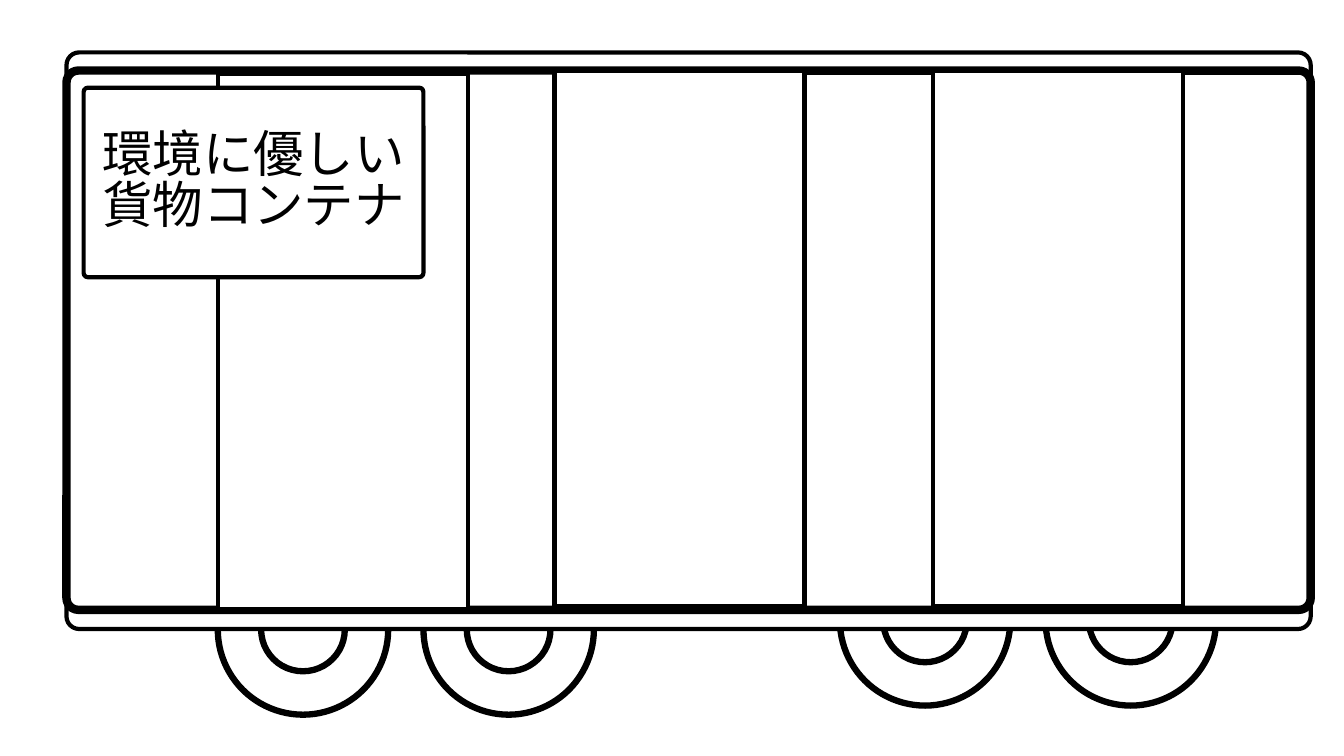
import dataclasses

import pptx
import pptx.dml.color
import pptx.enum.shapes
import pptx.enum.text
import pptx.util
from pptx.oxml.xmlchemy import OxmlElement


@dataclasses.dataclass(frozen=True)
class Theme:
    ink: str = "000000"
    paper: str = "FFFFFF"
    font: str = "Noto Sans CJK JP"
    size: int = 36
    pitch: float = 0.85
    thin: float = 3
    wheel: float = 4.5
    thick: float = 6
    corner: float = 0.022


class Wagon:
    scale = 9144
    kinds = pptx.enum.shapes.MSO_SHAPE

    def __init__(self, deck, theme):
        self.theme = theme
        self.slide = deck.slides.add_slide(deck.slide_layouts[6])

    def color(self, value):
        return pptx.dml.color.RGBColor.from_string(value)

    def shape(self, kind, box, width, fill=None, owner=None):
        owner = owner or self.slide
        item = owner.shapes.add_shape(kind, *(n * self.scale for n in box))
        item.shadow.inherit = False
        if fill:
            item.fill.solid()
            item.fill.fore_color.rgb = self.color(fill)
        else:
            item.fill.background()
        item.line.color.rgb = self.color(self.theme.ink)
        item.line.width = pptx.util.Pt(width)
        return item

    def wheel(self, left, top, size=169, inset=43):
        group = self.slide.shapes.add_group_shape()
        for gap in (0, inset):
            side = size - 2 * gap
            box = (left + gap, top + gap, side, side)
            self.shape(self.kinds.OVAL, box, self.theme.wheel, owner=group)

    def panel(self, left, top):
        box = (left, top, 248, 531)
        self.shape(self.kinds.RECTANGLE, box, self.theme.thin, self.theme.paper)

    def plate(self, box, width):
        item = self.shape(
            self.kinds.ROUNDED_RECTANGLE, box, width, self.theme.paper
        )
        item.adjustments[0] = self.theme.corner
        return item

    def label(self, box, lines):
        frame = self.plate(box, self.theme.thin).text_frame
        frame.word_wrap = True
        frame.vertical_anchor = pptx.enum.text.MSO_ANCHOR.MIDDLE
        for index, text in enumerate(lines):
            para = frame.add_paragraph() if index else frame.paragraphs[0]
            para.alignment = pptx.enum.text.PP_ALIGN.CENTER
            para.line_spacing = self.theme.pitch
            run = para.add_run()
            run.text = text
            run.font.size = pptx.util.Pt(self.theme.size)
            run.font.color.rgb = self.color(self.theme.ink)
            run.font.name = self.theme.font
            east = OxmlElement("a:ea")
            east.set("typeface", self.theme.font)
            run.font._element.append(east)


def main():
    deck = pptx.Presentation()
    deck.slide_width = 1333 * Wagon.scale
    deck.slide_height = 750 * Wagon.scale
    theme = Theme()
    wagon = Wagon(deck, theme)
    for start, top in ((216, 540), (833, 531)):
        for step in range(2):
            wagon.wheel(start + 204 * step, top)
    wagon.plate((66, 52, 1234, 572), theme.thin)
    wagon.plate((66, 70, 1234, 535), theme.thick)
    wagon.panel(216, 73)
    wagon.label((83, 87, 337, 188), ("環境に優しい", "貨物コンテナ"))
    for left in (925, 550):
        wagon.panel(left, 70)
    deck.save("out.pptx")


if __name__ == "__main__":
    main()
